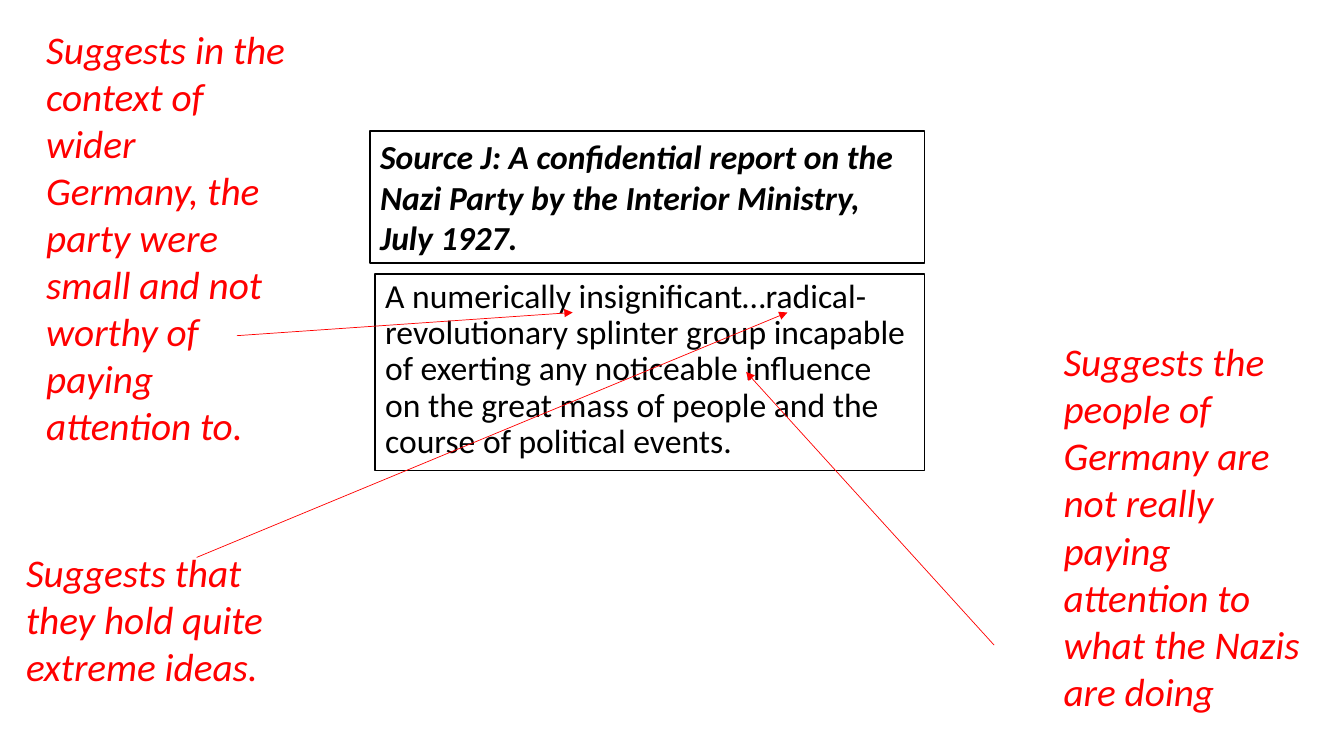
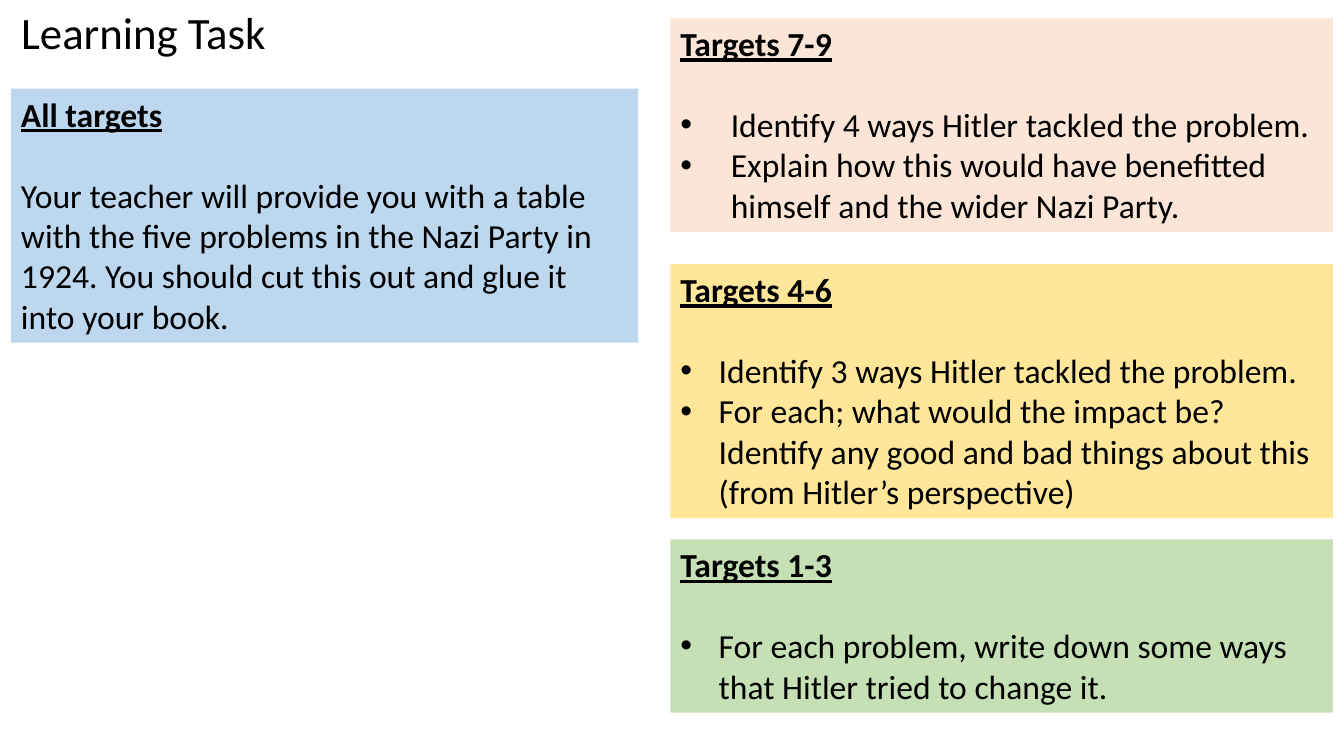
from lxml.etree import SubElement
from pptx import Presentation
from pptx.dml.color import RGBColor
from pptx.enum.shapes import MSO_CONNECTOR as Connector, MSO_SHAPE as Preset
from pptx.enum.text import MSO_ANCHOR as Anchor, MSO_AUTO_SIZE as AutoSize, PP_ALIGN as Align
from pptx.oxml.ns import qn
from pptx.util import Inches, Pt

COLORS = {
    "text": "000000",
    "paper": "FFFFFF",
    "note": "FF0000",
    "all": "BDD7EE",
    "high": "FBE5D6",
    "middle": "FFE699",
    "low": "C5E0B4",
}
FONT = "Calibri"
TITLE_AND_BODY, TITLE_ONLY = 1, 5
NOTE_WIDTH = 2.68
TARGETS_LEFT, TARGETS_WIDTH = 6.65, 6.57
HEADING_GAP = 29


def rgb(name):
    return RGBColor.from_string(COLORS[name])


def place(shape, left, top, width, height):
    shape.left, shape.top = Inches(left), Inches(top)
    shape.width, shape.height = Inches(width), Inches(height)


def prepare_frame(shape):
    frame = shape.text_frame
    frame.word_wrap = True
    frame.auto_size = AutoSize.NONE
    frame.vertical_anchor = Anchor.TOP
    return frame


def set_bullet(paragraph, indent=0):
    """Hang a bullet by indent inches, or switch bullets off when it is 0."""
    properties = paragraph._p.get_or_add_pPr()
    properties.set("marL", str(Inches(indent)))
    properties.set("indent", str(Inches(-indent)))
    if indent:
        SubElement(properties, qn("a:buFont"), typeface="Arial")
        SubElement(properties, qn("a:buChar"), char="•")
    else:
        SubElement(properties, qn("a:buNone"))


def write(paragraph, text, size=24, color="text", bold=False, italic=False,
          underline=False, indent=0):
    paragraph.text = text
    set_bullet(paragraph, indent)
    paragraph.alignment = Align.LEFT
    paragraph.space_before = Pt(0)
    font = paragraph.font
    font.name, font.size = FONT, Pt(size)
    font.color.rgb = rgb(color)
    font.bold, font.italic, font.underline = bold, italic, underline


def fill_placeholder(placeholder, box, text, **style):
    place(placeholder, *box)
    paragraph = prepare_frame(placeholder).paragraphs[0]
    write(paragraph, text, **style)
    return paragraph


def frame_source(placeholder):
    placeholder.fill.solid()
    placeholder.fill.fore_color.rgb = rgb("paper")
    placeholder.line.color.rgb = rgb("text")
    placeholder.line.width = Pt(1)


def add_note(slide, left, top, height, text):
    note = slide.shapes.add_textbox(
        Inches(left), Inches(top), Inches(NOTE_WIDTH), Inches(height))
    write(prepare_frame(note).paragraphs[0], text, size=28, color="note", italic=True)


def add_arrow(slide, start, end):
    arrow = slide.shapes.add_connector(
        Connector.STRAIGHT, *(Inches(length) for length in start + end))
    arrow.line.color.rgb = rgb("note")
    arrow.line.width = Pt(0.5)
    SubElement(arrow.line._get_or_add_ln(), qn("a:tailEnd"), type="triangle")
    SubElement(arrow._element.spPr, qn("a:effectLst"))


def add_panel(slide, box, color, heading, lines, indent=0):
    panel = slide.shapes.add_shape(Preset.RECTANGLE, *(Inches(length) for length in box))
    panel.shadow.inherit = False
    panel.fill.solid()
    panel.fill.fore_color.rgb = rgb(color)
    panel.line.fill.background()
    frame = prepare_frame(panel)
    heading_line = frame.paragraphs[0]
    write(heading_line, heading, bold=True, underline=True)
    heading_line.space_after = Pt(HEADING_GAP)
    for line in lines:
        write(frame.add_paragraph(), line, indent=indent)


def build_source_slide(deck):
    slide = deck.slides.add_slide(deck.slide_layouts[TITLE_AND_BODY])
    title, body = slide.shapes.title, slide.placeholders[1]
    fill_placeholder(
        title, (3.67, 1.3, 5.5, 1.31),
        "Source J: A confidential report on the Nazi Party by the Interior Ministry, July 1927.",
        bold=True, italic=True)
    quotation = fill_placeholder(
        body, (3.72, 2.72, 5.45, 1.95),
        "A numerically insignificant…radical-revolutionary splinter group incapable of "
        "exerting any noticeable influence on the great mass of people and the course of "
        "political events.")
    quotation.line_spacing = 0.9
    for source_part in (title, body):
        frame_source(source_part)

    add_note(slide, 0.36, 0.2, 4.34,
             "Suggests in the context of wider Germany, the party were small and not "
             "worthy of paying attention to.")
    add_note(slide, 0.16, 5.39, 1.51, "Suggests that they hold quite extreme ideas.")
    add_note(slide, 10.45, 3.3, 3.87,
             "Suggests the people of Germany are not really paying attention to what "
             "the Nazis are doing")
    for start, end in (
        ((9.86, 6.4), (7.4, 3.69)),
        ((1.95, 5.53), (7.81, 3.1)),
        ((2.35, 3.33), (5.68, 3.1)),
    ):
        add_arrow(slide, start, end)


def build_task_slide(deck):
    slide = deck.slides.add_slide(deck.slide_layouts[TITLE_ONLY])
    fill_placeholder(slide.shapes.title, (0.11, 0, 5.85, 0.64), "Learning Task", size=32)
    add_panel(slide, (0.11, 0.88, 6.22, 2.52), "all", "All targets", [
        "Your teacher will provide you with a table with the five problems in the Nazi "
        "Party in 1924. You should cut this out and glue it into your book."])

    target_panels = (
        (0.18, 2.12, "high", "Targets 7-9", 0.5, [
            "Identify 4 ways Hitler tackled the problem.",
            "Explain how this would have benefitted himself and the wider Nazi Party."]),
        (2.62, 2.52, "middle", "Targets 4-6", 0.38, [
            "Identify 3 ways Hitler tackled the problem.",
            "For each; what would the impact be? Identify any good and bad things about "
            "this (from Hitler’s perspective)"]),
        (5.35, 1.72, "low", "Targets 1-3", 0.38, [
            "For each problem, write down some ways that Hitler tried to change it."]),
    )
    for top, height, color, heading, indent, tasks in target_panels:
        add_panel(slide, (TARGETS_LEFT, top, TARGETS_WIDTH, height),
                  color, heading, tasks, indent)


def main():
    deck = Presentation()
    deck.slide_width, deck.slide_height = Inches(13.33), Inches(7.5)
    build_source_slide(deck)
    build_task_slide(deck)
    deck.save("out.pptx")


if __name__ == "__main__":
    main()
